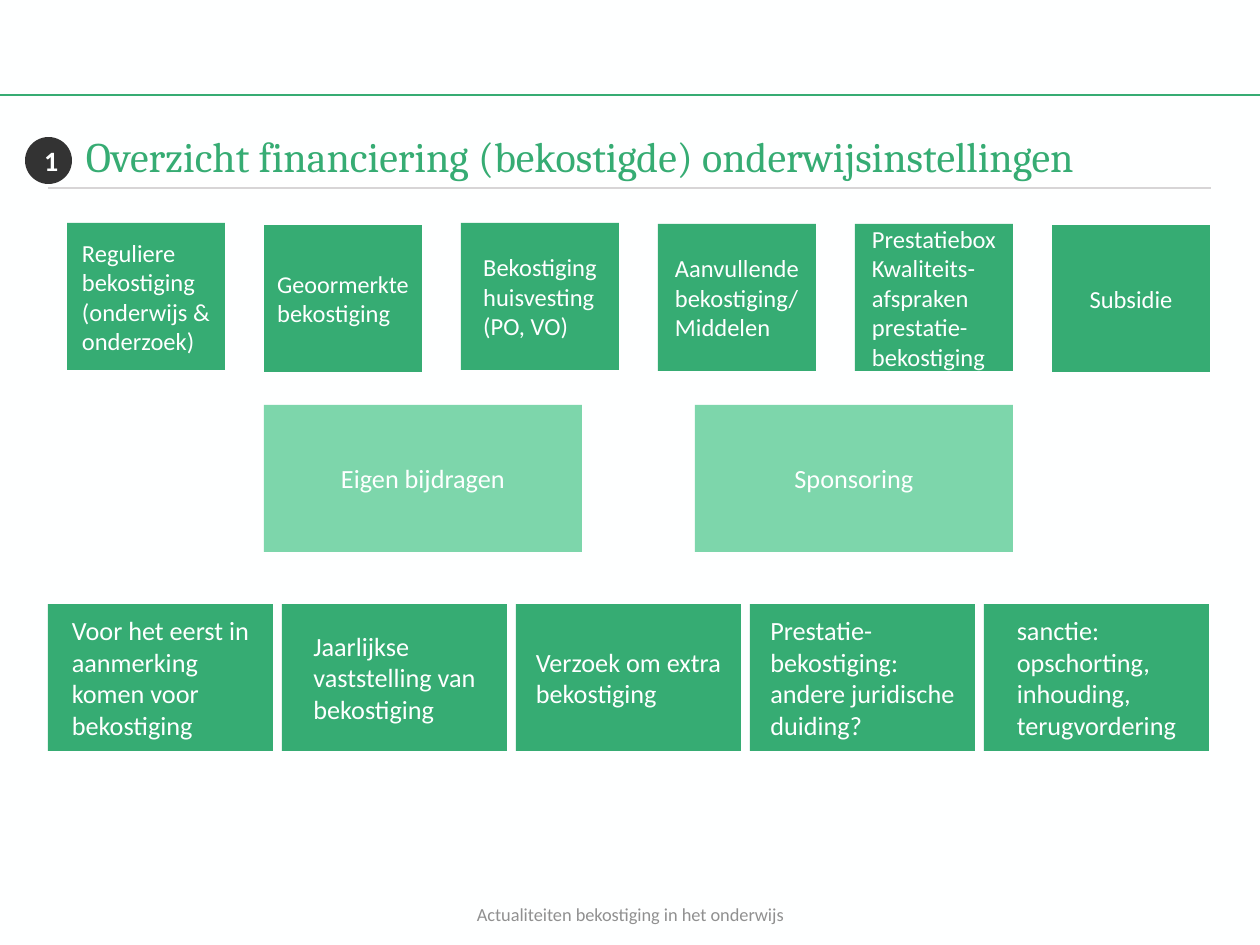
"""Build the slide that gives an overview of school funding."""
from dataclasses import dataclass

import pptx
import pptx.dml.color
import pptx.enum.shapes
import pptx.enum.text
import pptx.util
from lxml import etree
from pptx.oxml.ns import qn

EMU_PER_PX = 914400 // 126
ALIGN = pptx.enum.text.PP_ALIGN
ANCHOR = pptx.enum.text.MSO_ANCHOR
SHAPE = pptx.enum.shapes.MSO_SHAPE


@dataclass(frozen=True)
class Theme:
    background: str = "FEFFFF"
    green: str = "36AC73"
    light_green: str = "7DD6AB"
    dark: str = "333333"
    rule: str = "D7D5D6"
    muted: str = "909090"
    heading_font: str = "Cambria"
    body_font: str = "Calibri"
    title_pt: float = 24
    number_pt: float = 16
    box_pt: float = 15
    source_pt: float = 14
    tight_pt: float = 13.8
    footer_pt: float = 10.5


THEME = Theme()


@dataclass(frozen=True)
class Box:
    lines: tuple[str, ...]
    drop: int = 0
    first_pt: float | None = None


@dataclass(frozen=True)
class Row:
    left: int
    top: int
    width: int
    gap: int
    fill: str
    pt: float
    boxes: tuple[Box, ...]
    height: int = 147


ROWS = (
    Row(264, 405, 318, 113, THEME.light_green, THEME.box_pt, (
        Box(("Eigen bijdragen",)),
        Box(("Sponsoring",)),
    )),
    Row(48, 604, 225, 9, THEME.green, THEME.box_pt, (
        Box(("Voor het eerst in aanmerking komen voor bekostiging",)),
        Box(("Jaarlijkse vaststelling van bekostiging",)),
        Box(("Verzoek om extra bekostiging",)),
        Box(("Prestatie-bekostiging: andere juridische duiding?",)),
        Box(("sanctie: opschorting, inhouding, terugvordering",)),
    )),
    Row(67, 223, 158, 39, THEME.green, THEME.source_pt, (
        Box(("Reguliere bekostiging", "(onderwijs & onderzoek)")),
        Box(("Geoormerkte", "bekostiging"), 2, THEME.tight_pt),
        Box(("Bekostiging huisvesting", "(PO, VO)")),
        Box(("Aanvullende bekostiging/", "Middelen"), 1),
        Box(("Prestatiebox", "Kwaliteits-afspraken", "prestatie-bekostiging"), 1),
        Box(("Subsidie",), 2),
    )),
)


def px(n: int) -> int:
    """Turn pixels into EMU."""
    return pptx.util.Emu(n * EMU_PER_PX)


def rgb(color: str) -> pptx.dml.color.RGBColor:
    """Turn a hex string into a colour."""
    return pptx.dml.color.RGBColor.from_string(color)


def write(tf, lines: tuple[str, ...], pt: float, color: str, font: str = THEME.body_font,
          align=ALIGN.LEFT, bold: bool = False) -> None:
    """Fill a text frame with one paragraph for each line."""
    tf.word_wrap = True
    for i, line in enumerate(lines):
        p = tf.add_paragraph() if i else tf.paragraphs[0]
        p.text = line
        p.alignment = align
        p.font.size = pptx.util.Pt(pt)
        p.font.name = font
        p.font.bold = bold
        p.font.color.rgb = rgb(color)


def add_filled(s, kind, left: int, top: int, width: int, height: int, fill: str):
    """Add a plain filled shape with its text in the middle."""
    sp = s.shapes.add_shape(kind, px(left), px(top), px(width), px(height))
    sp.shadow.inherit = False
    sp.fill.solid()
    sp.fill.fore_color.rgb = rgb(fill)
    sp.line.fill.background()
    sp.text_frame.vertical_anchor = ANCHOR.MIDDLE
    return sp


def add_row(s, row: Row) -> None:
    """Add evenly spaced boxes whose left-aligned text block is centred."""
    for i, box in enumerate(row.boxes):
        left = row.left + i * (row.width + row.gap)
        sp = add_filled(s, SHAPE.RECTANGLE, left, row.top + box.drop,
                        row.width, row.height, row.fill)
        tf = sp.text_frame
        write(tf, box.lines, row.pt, THEME.background)
        if box.first_pt:
            tf.paragraphs[0].font.size = pptx.util.Pt(box.first_pt)
        sp.element.txBody.find(qn("a:bodyPr")).set("anchorCtr", "1")


def add_rule(s, left: int, right: int, y: int, color: str, pt: float) -> None:
    """Add a horizontal line."""
    line = s.shapes.add_connector(pptx.enum.shapes.MSO_CONNECTOR.STRAIGHT,
                                  px(left), px(y), px(right), px(y))
    line.line.color.rgb = rgb(color)
    line.line.width = pptx.util.Pt(pt)
    etree.SubElement(line.element.spPr, qn("a:effectLst"))


def add_label(s, left: int, top: int, width: int, height: int, anchor):
    """Add a text box without margins and return its text frame."""
    tf = s.shapes.add_textbox(px(left), px(top), px(width), px(height)).text_frame
    tf.margin_left = tf.margin_top = tf.margin_right = tf.margin_bottom = 0
    tf.vertical_anchor = anchor
    return tf


def main() -> None:
    """Build and save the slide."""
    prs = pptx.Presentation()
    prs.slide_width = pptx.util.Inches(10)
    prs.slide_height = pptx.util.Inches(7.5)
    s = prs.slides.add_slide(prs.slide_layouts[6])
    s.background.fill.solid()
    s.background.fill.fore_color.rgb = rgb(THEME.background)

    add_rule(s, 0, 1260, 95, THEME.green, 1.5)
    add_rule(s, 48, 1211, 188, THEME.rule, 1)
    title = add_label(s, 86, 131, 1162, 50, ANCHOR.TOP)
    write(title, ("Overzicht financiering (bekostigde) onderwijsinstellingen",),
          THEME.title_pt, THEME.green, THEME.heading_font)
    for row in ROWS:
        add_row(s, row)
    number = add_filled(s, SHAPE.OVAL, 25, 137, 47, 47, THEME.dark)
    write(number.text_frame, ("1",), THEME.number_pt, THEME.background,
          align=ALIGN.CENTER, bold=True)
    footer = add_label(s, 431, 903, 399, 23, ANCHOR.MIDDLE)
    write(footer, ("Actualiteiten bekostiging in het onderwijs",),
          THEME.footer_pt, THEME.muted, align=ALIGN.CENTER)
    prs.save("out.pptx")


if __name__ == "__main__":
    main()
